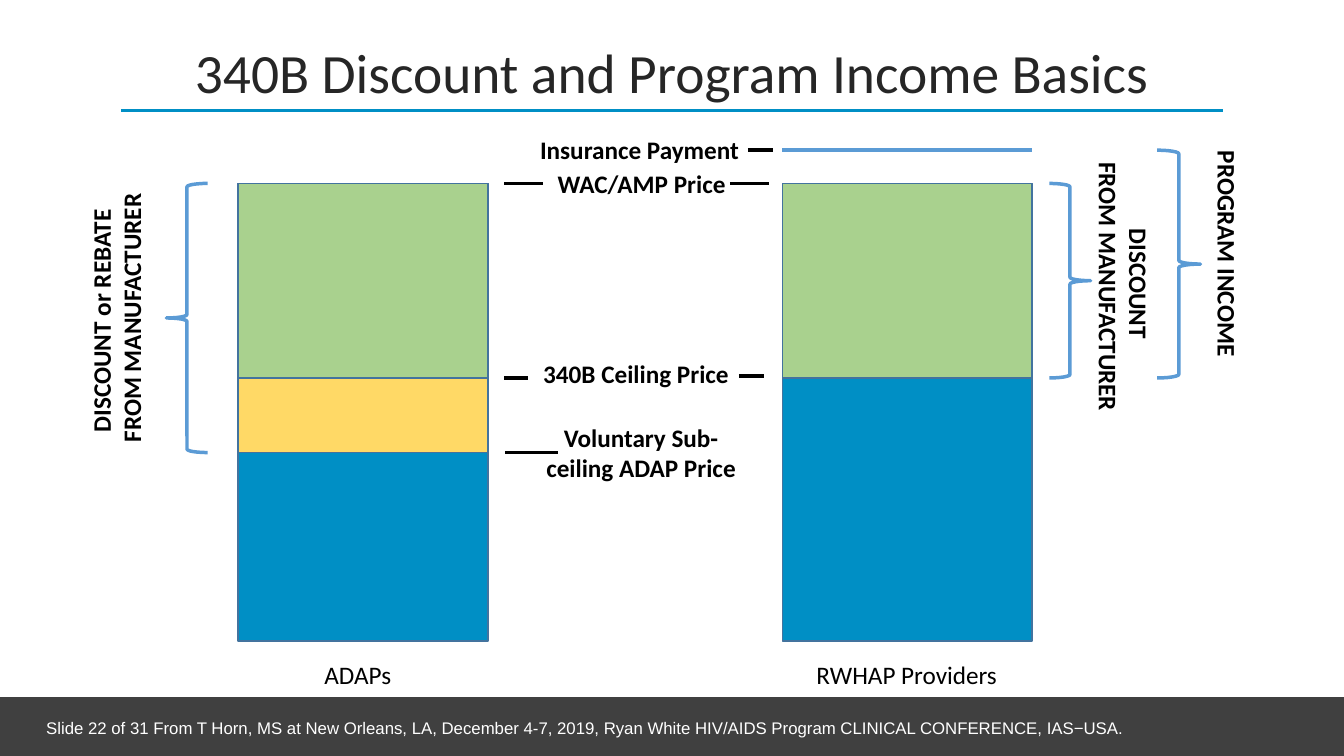
import pptx
import pptx.dml.color
import pptx.enum.shapes
import pptx.enum.text
import pptx.oxml.ns
import pptx.util
from lxml import etree

CELL = 0.1  # inches per grid column and row
COLUMNS, ROWS = 133.33, 75
COLORS = {
    "ink": "000000", "title": "262626", "white": "FFFFFF", "footer": "404040",
    "price": "008FC5", "discount": "A9D18E", "sub_ceiling": "FFD966",
    "bar_edge": "43739E", "bracket": "5B9BD5",
}
SHAPE = pptx.enum.shapes.MSO_SHAPE
ANCHOR = pptx.enum.text.MSO_ANCHOR
ALIGN = pptx.enum.text.PP_ALIGN
AUTO = pptx.enum.text.MSO_AUTO_SIZE


def grid(*cells):
    return [pptx.util.Inches(n * CELL) for n in cells]


def rgb(name):
    return pptx.dml.color.RGBColor.from_string(COLORS[name])


def write(tf, text, size=18, bold=False, color="ink", font="Calibri",
          align=ALIGN.CENTER, spacing=None):
    """Fill a frame with one paragraph; each newline becomes a line break."""
    p = tf.paragraphs[0]
    p.alignment = align
    p.line_spacing = spacing
    for i, line in enumerate(text.split("\n")):
        if i:
            p.add_line_break()
        r = p.add_run()
        r.text = line
        r.font.name, r.font.bold = font, bold
        r.font.size = pptx.util.Pt(size)
        r.font.color.rgb = rgb(color)


class Deck:
    def __init__(self):
        self.prs = pptx.Presentation()
        self.prs.slide_width, self.prs.slide_height = grid(COLUMNS, ROWS)
        self.s = self.prs.slides.add_slide(self.prs.slide_layouts[6])

    def shape(self, kind, box, line, width, fill=None):
        sp = self.s.shapes.add_shape(kind, *grid(*box))
        sp.shadow.inherit = False
        if fill:
            sp.fill.solid()
            sp.fill.fore_color.rgb = rgb(fill)
        else:
            sp.fill.background()
        sp.line.color.rgb = rgb(line)
        sp.line.width = pptx.util.Pt(width)

    def rule(self, x1, x2, y, color="ink", width=2.5):
        """Draw a horizontal line from column x1 to x2 on row y."""
        cx = self.s.shapes.add_connector(
            pptx.enum.shapes.MSO_CONNECTOR.STRAIGHT, *grid(x1, y, x2, y))
        cx.line.color.rgb = rgb(color)
        cx.line.width = pptx.util.Pt(width)
        etree.SubElement(cx.element.spPr, pptx.oxml.ns.qn("a:effectLst"))

    def text(self, box, text, vert=None, anchor=ANCHOR.TOP,
             auto=AUTO.SHAPE_TO_FIT_TEXT, **style):
        tf = self.s.shapes.add_textbox(*grid(*box)).text_frame
        tf.word_wrap = True
        tf.auto_size = auto
        tf.vertical_anchor = anchor
        if vert:
            tf._txBody.bodyPr.set("vert", vert)
        write(tf, text, **style)


def main():
    deck = Deck()

    deck.shape(SHAPE.RECTANGLE, (0, 69.2, COLUMNS, 5.8), "footer", 1, "footer")
    deck.rule(12, 121.3, 11, "price", 2.25)
    deck.text((3.6, 70.7, 121, 3),
              "Slide 22 of 31 From T Horn, MS at New Orleans, LA, December 4-7, "
              "2019, Ryan White HIV/AIDS Program CLINICAL CONFERENCE, IAS−USA.",
              size=12, font="Arial", color="white", align=ALIGN.LEFT)
    deck.text((12, 4, 109.3, 7), "340B Discount and Program Income Basics",
              anchor=ANCHOR.MIDDLE, auto=AUTO.NONE, size=39.6, color="title",
              spacing=0.9)

    # Price levels, as rows
    insurance, wac, ceiling, sub_ceiling, base = 14.9, 18.2, 37.5, 44.9, 63.6
    adap, provider, bar_width = 23.6, 77.6, 24.8

    for x, top, bottom, fill in (
        (adap, wac, base, "price"),
        (provider, wac, base, "price"),
        (adap, wac, ceiling, "discount"),
        (provider, wac, ceiling, "discount"),
        (adap, ceiling, sub_ceiling, "sub_ceiling"),
    ):
        deck.shape(SHAPE.RECTANGLE, (x, top, bar_width, bottom - top),
                   "bar_edge", 1, fill)
    deck.rule(provider, provider + bar_width, insurance, "bracket")

    for box, label in (
        ((52.4, 12.8, 22.1, 4), "Insurance Payment"),
        ((53.9, 16.2, 19.5, 4), "WAC/AMP Price"),
        ((52.7, 35.1, 20.8, 4), "340B Ceiling Price"),
        ((53.2, 41.4, 20.8, 7.1), "Voluntary Sub-ceiling ADAP Price"),
    ):
        deck.text(box, label, bold=True)
    deck.text((29.2, 64.9, 12.6, 4), "ADAPs")
    deck.text((79.7, 64.9, 20.5, 4), "RWHAP Providers")

    for x1, x2, y in (
        (74.2, 76.7, insurance),
        (50, 53.9, wac), (72.4, 76.3, wac),
        (50, 52.4, ceiling), (73.3, 75.8, ceiling - 0.2),
        (50.1, 55.4, sub_ceiling),
    ):
        deck.rule(x1, x2, y)

    for kind, x, width, top, bottom in (
        (SHAPE.LEFT_BRACE, 16.5, 4.1, wac, sub_ceiling),
        (SHAPE.RIGHT_BRACE, 104.1, 4.1, wac, ceiling),
        (SHAPE.RIGHT_BRACE, 114.8, 4.3, insurance, ceiling),
    ):
        deck.shape(kind, (x, top, width, bottom - top), "bracket", 2.5)

    for x, y, width, vert, label in (
        (8, 16.5, 8.1, "vert270", "DISCOUNT or REBATE \nFROM MANUFACTURER"),
        (106.9, 13.4, 8.1, "vert", "DISCOUNT \nFROM MANUFACTURER"),
        (118.8, 10.4, 5, "vert", "PROGRAM INCOME "),
    ):
        deck.text((x, y, width, 30.1), label, vert=vert, bold=True)

    deck.prs.save("out.pptx")


if __name__ == "__main__":
    main()
